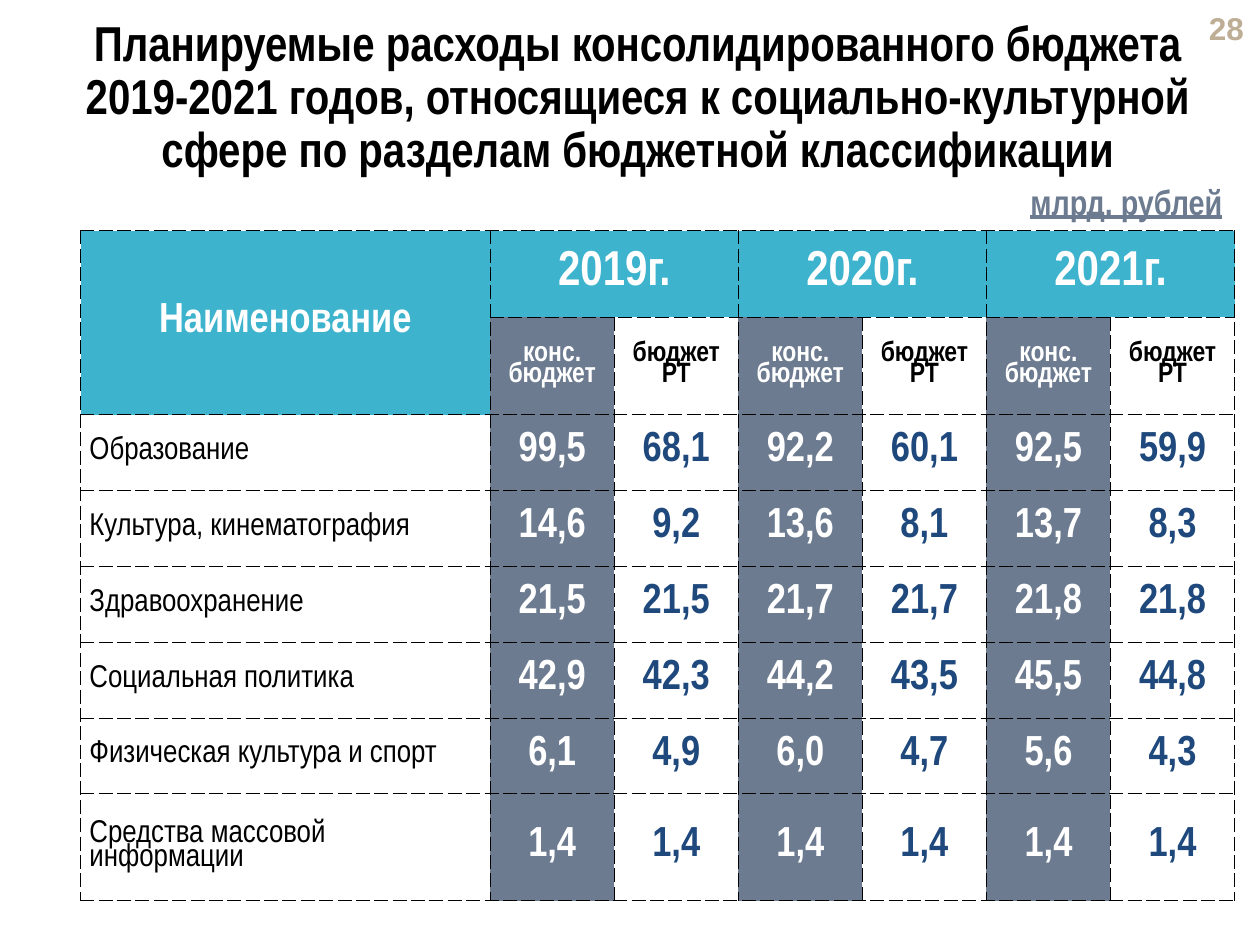
"""Build a slide with a table of planned social and cultural budget spending."""
from typing import NamedTuple

from lxml.etree import SubElement
from pptx import Presentation
from pptx.dml.color import RGBColor
from pptx.enum.text import MSO_ANCHOR as Anchor, PP_ALIGN as Align
from pptx.oxml.ns import qn
from pptx.util import Inches, Pt

WIDTH, HEIGHT = Inches(10), Inches(7.5)
FONT = "Arial Narrow"
BLACK, WHITE, TEAL, SLATE, NAVY, SAND = (
    "000000", "FFFFFF", "3DB3CD", "6C7B90", "1F497D", "BFAE96")
LABEL_COLUMN, VALUE_COLUMN = 32.5, 9.85
HEADER_ROWS, BODY_ROW, LAST_ROW = [9.2, 10.27], 8.03, 11.33
YEARS = ["2019г.", "2020г.", "2021г."]


class Area(NamedTuple):
    """Position and size in percent of the slide."""
    left: float
    top: float
    width: float
    height: float


class Section(NamedTuple):
    """Budget section with a consolidated and a republic value per year."""
    name: str
    values: str


SECTIONS = [
    Section("Образование", "99,5 68,1 92,2 60,1 92,5 59,9"),
    Section("Культура, кинематография", "14,6 9,2 13,6 8,1 13,7 8,3"),
    Section("Здравоохранение", "21,5 21,5 21,7 21,7 21,8 21,8"),
    Section("Социальная политика", "42,9 42,3 44,2 43,5 45,5 44,8"),
    Section("Физическая культура и спорт", "6,1 4,9 6,0 4,7 5,6 4,3"),
    Section("Средства массовой информации", "1,4 1,4 1,4 1,4 1,4 1,4"),
]


def color(code: str) -> RGBColor:
    """Turn a hex string into a colour."""
    return RGBColor.from_string(code)


def across(percent: float) -> int:
    """Turn a percentage of the slide width into a length."""
    return round(WIDTH * percent / 100)


def down(percent: float) -> int:
    """Turn a percentage of the slide height into a length."""
    return round(HEIGHT * percent / 100)


def place(area: Area) -> tuple:
    """Turn an area into left, top, width and height."""
    return across(area.left), down(area.top), across(area.width), down(area.height)


def write(frame, text: str, *, size: float, ink: str, font: str = FONT,
          bold: bool = True, underline: bool = False, align=Align.CENTER,
          spacing: float = 1.0) -> None:
    """Fill a text frame with one formatted paragraph."""
    frame.word_wrap = True
    para = frame.paragraphs[0]
    para.alignment, para.line_spacing = align, spacing
    para.space_before = Pt(0)
    span = para.add_run()
    span.text = text
    span.font.name, span.font.size = font, Pt(size)
    span.font.bold, span.font.underline = bold, underline
    span.font.color.rgb = color(ink)


def add_text(page, area: Area, text: str, anchor=Anchor.TOP, **style) -> None:
    """Add a text box."""
    box = page.shapes.add_textbox(*place(area))
    box.text_frame.vertical_anchor = anchor
    write(box.text_frame, text, **style)


def add_borders(cell) -> None:
    """Give a cell thin dashed borders on all sides."""
    properties = cell._tc.get_or_add_tcPr()
    for index, side in enumerate(("lnL", "lnR", "lnT", "lnB")):
        line = SubElement(properties, qn(f"a:{side}"), w=str(Pt(0.5)))
        properties.insert(index, line)
        fill = SubElement(line, qn("a:solidFill"))
        SubElement(fill, qn("a:srgbClr"), val=BLACK)
        SubElement(line, qn("a:prstDash"), val="sysDash")


def fill_cell(cell, text: str, fill: str, **style) -> None:
    """Write into a table cell and set its fill."""
    cell.fill.solid()
    cell.fill.fore_color.rgb = color(fill)
    cell.vertical_anchor = Anchor.MIDDLE
    write(cell.text_frame, text, spacing=0.8, **style)


def add_budget_table(page, left: float, top: float) -> None:
    """Add the spending table with its two header rows."""
    widths = [LABEL_COLUMN] + [VALUE_COLUMN] * 2 * len(YEARS)
    heights = HEADER_ROWS + [BODY_ROW] * (len(SECTIONS) - 1) + [LAST_ROW]
    area = Area(left, top, sum(widths), sum(heights))
    table = page.shapes.add_table(len(heights), len(widths), *place(area)).table
    table.first_row = table.horz_banding = False
    for column, width in zip(table.columns, widths):
        column.width = across(width)
    for row, height in zip(table.rows, heights):
        row.height = down(height)
    for cell in table.iter_cells():
        cell.margin_left = cell.margin_right = Inches(0.07)
        cell.margin_top = cell.margin_bottom = Inches(0.04)
        add_borders(cell)

    table.cell(0, 0).merge(table.cell(1, 0))
    fill_cell(table.cell(0, 0), "Наименование", TEAL, size=24, ink=WHITE)
    for index, year in enumerate(YEARS):
        first = 1 + 2 * index
        table.cell(0, first).merge(table.cell(0, first + 1))
        fill_cell(table.cell(0, first), year, TEAL, size=28, ink=WHITE)
        fill_cell(table.cell(1, first), "конс. бюджет", SLATE, size=16, ink=WHITE)
        fill_cell(table.cell(1, first + 1), "бюджет РТ", WHITE, size=16, ink=BLACK)
    for row, section in enumerate(SECTIONS, start=len(HEADER_ROWS)):
        fill_cell(table.cell(row, 0), section.name, WHITE, size=18, ink=BLACK,
                  bold=False, align=Align.LEFT)
        for column, value in enumerate(section.values.split(), start=1):
            fill, ink = (SLATE, WHITE) if column % 2 else (WHITE, NAVY)
            fill_cell(table.cell(row, column), value, fill, size=24, ink=ink)


def main() -> None:
    """Build and save the deck."""
    deck = Presentation()
    deck.slide_width, deck.slide_height = WIDTH, HEIGHT
    page = deck.slides.add_slide(deck.slide_layouts[5])
    title = page.shapes.title
    title.left, title.top, title.width, title.height = place(Area(4.4, 1.33, 92.4, 12.67))
    title.text_frame.vertical_anchor = Anchor.TOP
    write(title.text_frame,
          "Планируемые расходы консолидированного бюджета 2019-2021 годов, "
          "относящиеся к социально-культурной сфере по разделам бюджетной "
          "классификации", size=28, ink=BLACK, spacing=0.9)
    add_text(page, Area(93.3, 0.67, 6.4, 4.53), "28", anchor=Anchor.MIDDLE,
             size=18, ink=SAND, font="Arial", align=Align.RIGHT)
    add_text(page, Area(80.4, 18.4, 17.6, 5.87), "млрд. рублей", size=20,
             ink=SLATE, underline=True, align=Align.RIGHT)
    add_budget_table(page, left=6.4, top=24.4)
    deck.save("out.pptx")


if __name__ == "__main__":
    main()
